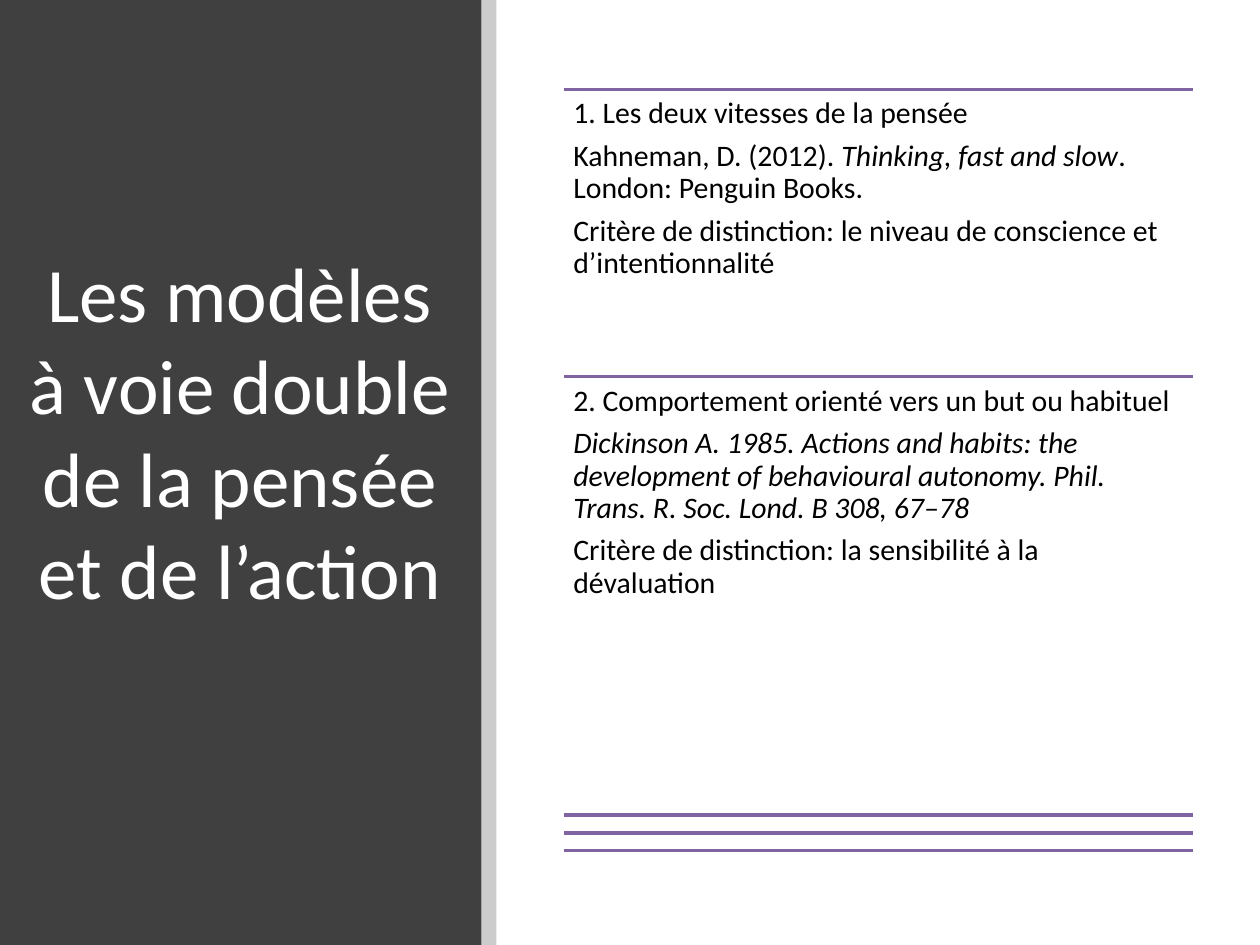
from dataclasses import dataclass

from lxml import etree
from pptx import Presentation
from pptx import util as u
from pptx.dml.color import RGBColor
from pptx.enum import shapes, text
from pptx.oxml.ns import qn


@dataclass(frozen=True)
class Theme:
    font: str = "Calibri"
    panel: str = "404040"
    shade: str = "000000"
    title: str = "FFFFFF"
    body: str = "000000"
    rule: str = "8064A2"
    title_size: int = 44
    body_size: int = 17
    rule_width: int = 2


class Builder:
    def __init__(self, page, theme):
        self.page = page
        self.theme = theme

    def panel(self, left, width, height, color, opacity=100):
        panel = self.page.shapes.add_shape(
            shapes.MSO_SHAPE.RECTANGLE,
            u.Inches(left), 0, u.Inches(width), u.Inches(height))
        panel.shadow.inherit = False
        panel.fill.solid()
        panel.fill.fore_color.rgb = RGBColor.from_string(color)
        panel.line.fill.background()
        if opacity < 100:
            fill = panel._element.spPr.find(qn("a:solidFill"))
            etree.SubElement(fill[0], qn("a:alpha"), val=str(opacity * 1000))

    def rule(self, left, top, width):
        line = self.page.shapes.add_connector(
            shapes.MSO_CONNECTOR.STRAIGHT, u.Inches(left), u.Inches(top),
            u.Inches(left + width), u.Inches(top))
        line.line.color.rgb = RGBColor.from_string(self.theme.rule)
        line.line.width = u.Pt(self.theme.rule_width)
        etree.SubElement(line._element.spPr, qn("a:effectLst"))

    def frame(self, left, top, width, height, anchor):
        box = self.page.shapes.add_textbox(
            u.Inches(left), u.Inches(top), u.Inches(width), u.Inches(height))
        frame = box.text_frame
        frame.word_wrap = True
        frame.vertical_anchor = anchor
        return frame

    def style(self, para, size, color):
        para.font.name = self.theme.font
        para.font.size = u.Pt(size)
        para.font.color.rgb = RGBColor.from_string(color)

    def title(self, left, top, width, height, words):
        frame = self.frame(left, top, width, height, text.MSO_ANCHOR.MIDDLE)
        para = frame.paragraphs[0]
        para.text = words
        para.alignment = text.PP_ALIGN.CENTER
        self.style(para, self.theme.title_size, self.theme.title)

    def body(self, left, top, width, height, paragraphs):
        """Each paragraph is a list of (words, italic) spans."""
        frame = self.frame(left, top, width, height, text.MSO_ANCHOR.TOP)
        frame.margin_left = frame.margin_right = u.Inches(0.07)
        frame.margin_top = frame.margin_bottom = u.Inches(0.07)
        for index, spans in enumerate(paragraphs):
            para = frame.add_paragraph() if index else frame.paragraphs[0]
            para.line_spacing = 0.9
            para.space_after = u.Pt(6)
            self.style(para, self.theme.body_size, self.theme.body)
            for words, italic in spans:
                span = para.add_run()
                span.text = words
                if italic:
                    span.font.italic = True


# Content: top, height and paragraphs of each model
MODELS = [
    (0.71, 2.28, [
        [("1. Les deux vitesses de la pensée", False)],
        [("Kahneman, D. (2012). ", False),
         ("Thinking, fast and slow", True),
         (". London: Penguin Books.", False)],
        [("Critère de distinction: le niveau de conscience et "
          "d’intentionnalité", False)],
    ]),
    (2.99, 2.22, [
        [("2. Comportement orienté vers un but ou habituel", False)],
        [("Dickinson A. 1985. Actions and habits: the development of "
          "behavioural autonomy. Phil. Trans. R. Soc. Lond. B 308, 67–78",
          True)],
        [("Critère de distinction: la sensibilité à la dévaluation", False)],
    ]),
]


def main():
    deck = Presentation()
    deck.slide_width, deck.slide_height = u.Inches(10), u.Inches(7.5)
    theme = Theme()
    builder = Builder(deck.slides.add_slide(deck.slide_layouts[6]), theme)

    # Title panel with its shaded edge
    builder.panel(0, 3.82, 7.5, theme.panel)
    builder.panel(3.82, 0.12, 7.5, theme.shade, opacity=20)
    builder.title(0.11, 0.46, 3.59, 5.91,
                  "Les modèles à voie double de la pensée et de l’action")

    # Models, each under a rule
    left, width = 4.48, 4.99
    for top, height, paragraphs in MODELS:
        builder.rule(left, top, width)
        builder.body(left, top, width, height, paragraphs)

    # Closing rules
    for step in range(3):
        builder.rule(left, 6.47 + 0.14 * step, width)

    deck.save("out.pptx")


if __name__ == "__main__":
    main()
